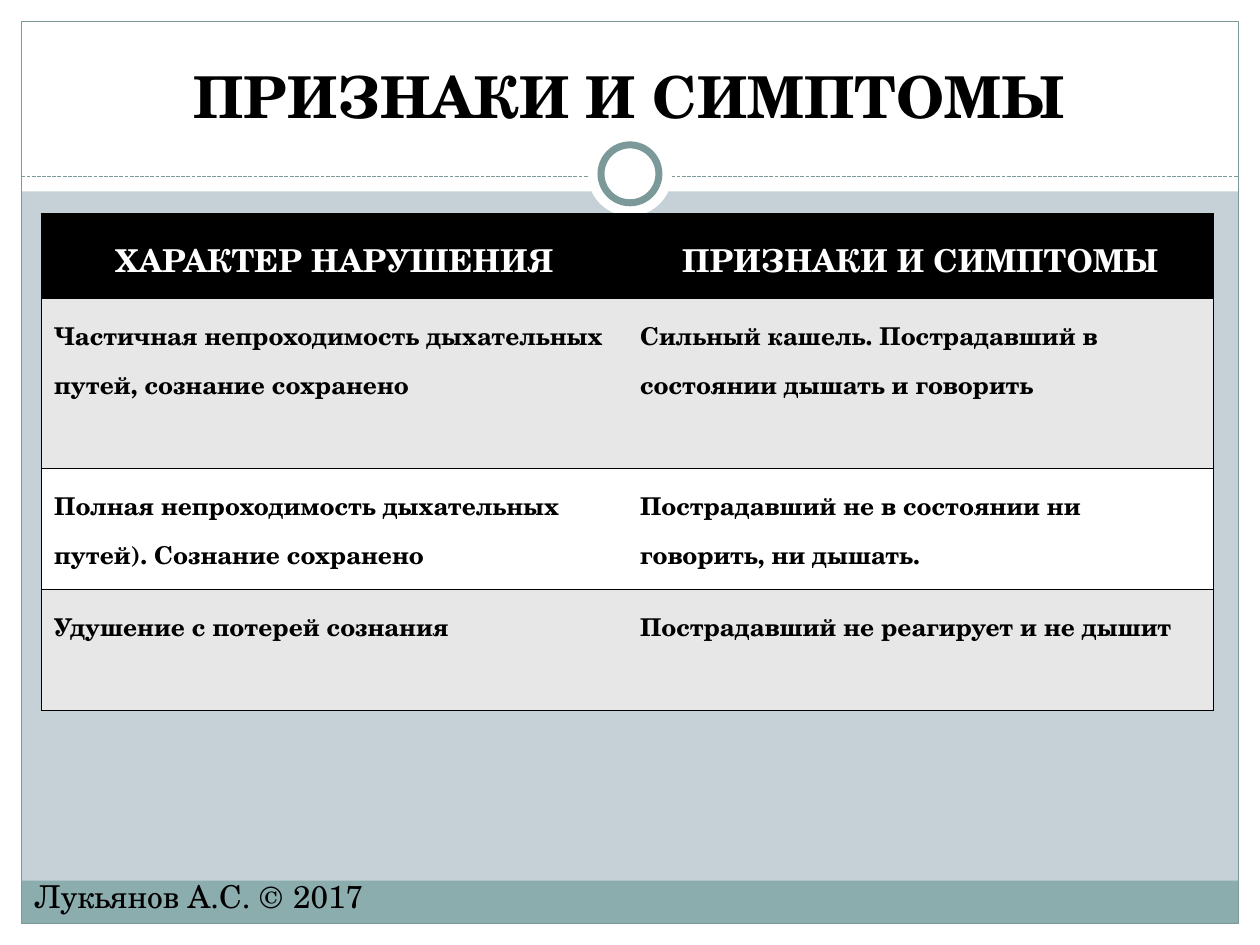
from lxml import etree
from pptx import Presentation, util as u
from pptx.dml.color import RGBColor
from pptx.enum import dml, shapes, text
from pptx.oxml import ns

# Content
TITLE = "ПРИЗНАКИ И СИМПТОМЫ"
FOOT = "Лукьянов А.С. ©\u00a02017"
ROWS = [
    ("ХАРАКТЕР НАРУШЕНИЯ", "ПРИЗНАКИ И СИМПТОМЫ"),
    ("Частичная непроходимость дыхательных путей, сознание сохранено",
     "Сильный кашель. Пострадавший в состоянии дышать и говорить"),
    ("Полная непроходимость дыхательных путей). Сознание сохранено",
     "Пострадавший не в состоянии ни говорить, ни дышать."),
    ("Удушение с потерей сознания", "Пострадавший не реагирует и не дышит"),
]
TALL = [0.67, 1.35, 0.96, 0.96]
FILLS = ["000000", "E7E7E7", "FFFFFF", "E7E7E7"]

# Look
FONT = "TeX Gyre Schola"
BLACK, WHITE, TEAL = "000000", "FFFFFF", "7C999A"
W, H, EDGE = 10, 7.5, 0.17
KIND = shapes.MSO_SHAPE


def rgb(code):
    return RGBColor.from_string(code)


def write(frame, words, size, color=BLACK, bold=False, align=None,
          lead=None, before=None):
    frame.word_wrap = True
    par = frame.paragraphs[0]
    par.alignment = align
    par.line_spacing = lead
    par.space_before = before
    run = par.add_run()
    run.text = words
    font = run.font
    font.name, font.size, font.bold = FONT, u.Pt(size), bold
    font.color.rgb = rgb(color)


def draw(kind, box, fill=None, line=None, width=0.75):
    form = slide.shapes.add_shape(kind, *map(u.Inches, box))
    form.shadow.inherit = False
    if fill:
        form.fill.solid()
        form.fill.fore_color.rgb = rgb(fill)
    else:
        form.fill.background()
    if line:
        form.line.color.rgb = rgb(line)
        form.line.width = u.Pt(width)
    else:
        form.line.fill.background()


def ring(mid, size, **look):
    x, y = mid
    draw(KIND.OVAL, (x - size / 2, y - size / 2, size, size), **look)


def label(box, words, size, anchor, **look):
    frame = slide.shapes.add_textbox(*map(u.Inches, box)).text_frame
    frame.vertical_anchor = anchor
    write(frame, words, size, align=text.PP_ALIGN.CENTER, **look)


def border(cell, sides, hide):
    prop = cell._tc.get_or_add_tcPr()
    for spot, side in enumerate("LRTB"):
        line = etree.Element(ns.qn("a:ln" + side), w=str(u.Pt(1)))
        if side in hide:
            etree.SubElement(line, ns.qn("a:noFill"))
        elif side in sides:
            solid = etree.SubElement(line, ns.qn("a:solidFill"))
            etree.SubElement(solid, ns.qn("a:srgbClr"), val=BLACK)
        prop.insert(spot, line)


deck = Presentation()
deck.slide_width, deck.slide_height = u.Inches(W), u.Inches(H)
slide = deck.slides.add_slide(deck.slide_layouts[6])
slide.background.fill.solid()
slide.background.fill.fore_color.rgb = rgb("C5D1D7")

# White margins, footer band and frame
for box in [(0, H - EDGE, W, EDGE), (0, 0, W, 1.52),
            (0, 0, EDGE, H), (W - EDGE, 0, EDGE, H)]:
    draw(KIND.RECTANGLE, box, fill=WHITE)
wide = W - 2 * EDGE
draw(KIND.RECTANGLE, (EDGE, 6.99, wide, 0.34), fill="8CADAE")
draw(KIND.RECTANGLE, (EDGE, EDGE, wide, H - 2 * EDGE), line=TEAL)

# Dashed rule with the ring on it
rule = slide.shapes.add_connector(
    shapes.MSO_CONNECTOR.STRAIGHT,
    *map(u.Inches, (EDGE, 1.4, W - EDGE, 1.4)))
rule.line.color.rgb = rgb(TEAL)
rule.line.width = u.Pt(0.75)
rule.line.dash_style = dml.MSO_LINE.SQUARE_DOT
etree.SubElement(rule._element.spPr, ns.qn("a:effectLst"))
ring((W / 2, 1.38), 0.67, fill=WHITE)
ring((W / 2, 1.38), 0.46, fill=WHITE, line=TEAL, width=4)

# Title
label((0.33, 0.25, 9.33, 0.83), TITLE, 33, text.MSO_ANCHOR.BOTTOM, bold=True)

# Table
grid = slide.shapes.add_table(
    len(ROWS), 2, *map(u.Inches, (0.33, 1.7, 9.3, sum(TALL)))).table
for col in grid.columns:
    col.width = u.Inches(4.65)
for r, (row, tall, fill) in enumerate(zip(ROWS, TALL, FILLS)):
    grid.rows[r].height = u.Inches(tall)
    head = r == 0
    for c, words in enumerate(row):
        cell = grid.cell(r, c)
        cell.fill.solid()
        cell.fill.fore_color.rgb = rgb(fill)
        border(cell, "LRTB", hide="L" if c else "R")
        write(cell.text_frame, words, 18 if head else 14, bold=True,
              color=WHITE if head else BLACK, lead=1.3,
              before=u.Pt(4 if head else 3),
              align=text.PP_ALIGN.CENTER if head else None)

# Footer
label((0.08, 6.91, 3, 0.4), FOOT, 18, text.MSO_ANCHOR.TOP)

deck.save("out.pptx")
